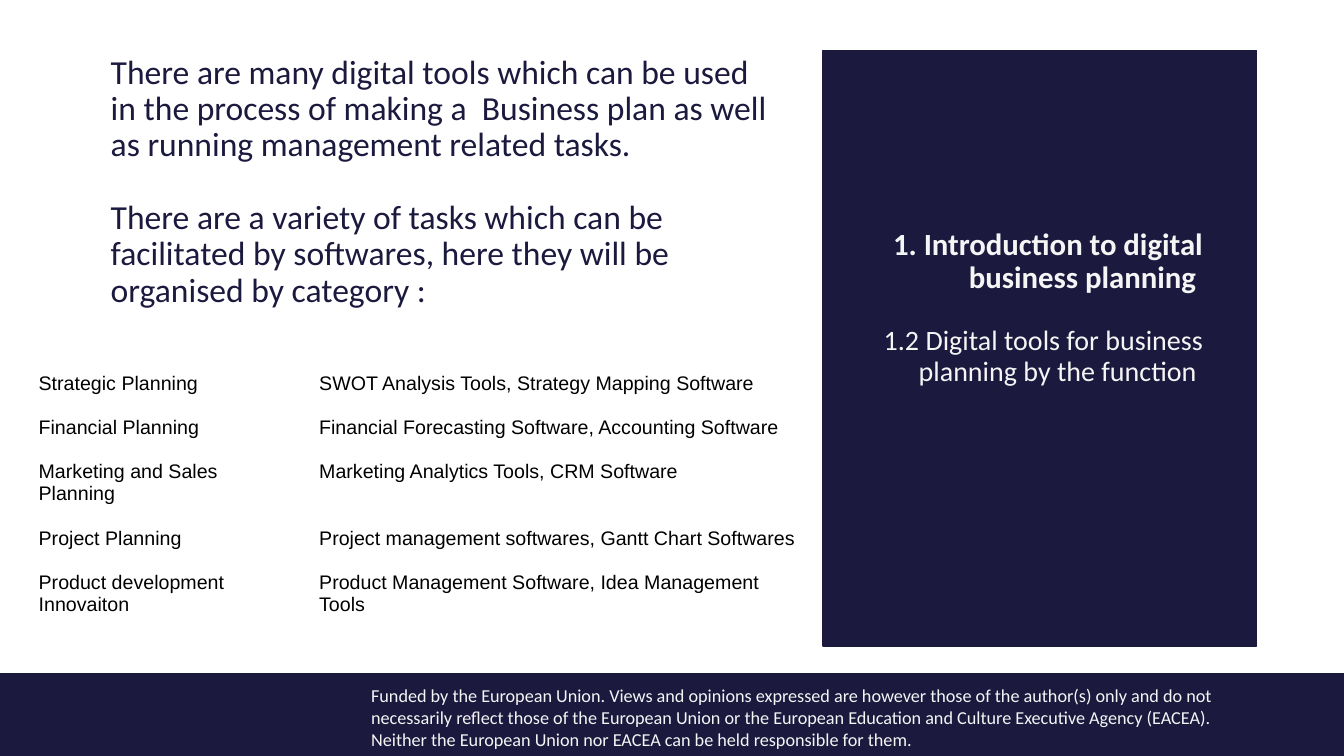
from dataclasses import dataclass

from pptx import Presentation
from pptx import util as u
from pptx.dml.color import RGBColor
from pptx.enum import shapes, text

CELL = u.Inches(1 / 12)  # the slide is a grid of 160 columns by 90 rows
COLORS = {"navy": "1B193E", "pale": "F5F5F5", "black": "000000"}


@dataclass(frozen=True)
class Area:
    column: float
    row: float
    columns: float
    rows: float

    def lengths(self) -> tuple:
        """Left, top, width and height in slide units."""
        return tuple(cells(n) for n in (self.column, self.row, self.columns, self.rows))


@dataclass(frozen=True)
class Style:
    size: float
    color: str
    font: str = "Calibri"
    bold: bool = False
    right: bool = False
    line_spacing: float = 1.0
    gap: float = 0


@dataclass(frozen=True)
class TextBlock:
    area: Area
    style: Style
    paragraphs: tuple


PANELS = (Area(0, 80.2, 160, 9.8), Area(98, 6, 51.6, 70.9))

TITLE = TextBlock(
    Area(103.2, 23.4, 41.2, 12.4),
    Style(22, "pale", bold=True, right=True, line_spacing=0.9),
    ("1. Introduction to digital business planning ",),
)
BLOCKS = (
    TextBlock(
        Area(43, 80.9, 106, 9.1),
        Style(13, "pale"),
        ("Funded by the European Union. Views and opinions expressed are however those "
         "of the author(s) only and do not necessarily reflect those of the European "
         "Union or the European Education and Culture Executive Agency (EACEA). Neither "
         "the European Union nor EACEA can be held responsible for them.",),
    ),
    TextBlock(
        Area(103.2, 38.3, 41.2, 33.7),
        Style(20, "pale", right=True, line_spacing=0.9),
        ("1.2 Digital tools for business planning by the function ",),
    ),
    TextBlock(
        Area(12, 6, 81, 70.9),
        Style(24, "navy", line_spacing=0.9, gap=26),
        ("There are many digital tools which can be used in the process of making a  "
         "Business plan as well as running management related tasks.",
         "There are a variety of tasks which can be facilitated by softwares, here they "
         "will be organised by category :"),
    ),
)

TOOLS = (
    ("Strategic Planning", "SWOT Analysis Tools, Strategy Mapping Software"),
    ("Financial Planning", "Financial Forecasting Software, Accounting Software"),
    ("Marketing and Sales Planning", "Marketing Analytics Tools, CRM Software"),
    ("Project Planning", "Project management softwares, Gantt Chart Softwares"),
    ("Product development Innovaiton", "Product Management Software, Idea Management Tools"),
)
TOOL_COLUMNS = (33.4, 59.3)
TOOL_ROW = 5.05
TOOL_AREA = Area(3.4, 43.2, sum(TOOL_COLUMNS), TOOL_ROW * len(TOOLS))
TOOL_STYLE = Style(14, "black", font="Arial")


def cells(count: float) -> int:
    return round(count * CELL)


def color(name: str) -> RGBColor:
    return RGBColor.from_string(COLORS[name])


def write(frame, paragraphs: tuple, style: Style) -> None:
    frame.word_wrap = True
    frame.text = "\n".join(paragraphs)
    for index, para in enumerate(frame.paragraphs):
        para.alignment = text.PP_ALIGN.RIGHT if style.right else text.PP_ALIGN.LEFT
        para.line_spacing = style.line_spacing
        para.space_before = u.Pt(style.gap if index else 0)
        for span in para.runs:
            span.font.name = style.font
            span.font.size = u.Pt(style.size)
            span.font.bold = style.bold
            span.font.color.rgb = color(style.color)


def add_panel(page, area: Area) -> None:
    panel = page.shapes.add_shape(shapes.MSO_SHAPE.RECTANGLE, *area.lengths())
    panel.shadow.inherit = False
    panel.fill.solid()
    panel.fill.fore_color.rgb = color("navy")
    panel.line.color.rgb = color("navy")
    panel.line.width = u.Pt(1)


def place_title(page, block: TextBlock) -> None:
    """Format the title placeholder and bring it in front of the panels."""
    title = page.shapes.title
    title.left, title.top, title.width, title.height = block.area.lengths()
    title.fill.solid()
    title.fill.fore_color.rgb = color("navy")
    frame = title.text_frame
    frame.auto_size = text.MSO_AUTO_SIZE.NONE
    frame.vertical_anchor = text.MSO_ANCHOR.BOTTOM
    write(frame, block.paragraphs, block.style)
    page.shapes._spTree.append(title._element)


def add_text(page, block: TextBlock) -> None:
    box = page.shapes.add_textbox(*block.area.lengths())
    write(box.text_frame, block.paragraphs, block.style)


def add_tool_table(page) -> None:
    table = page.shapes.add_table(len(TOOLS), len(TOOL_COLUMNS), *TOOL_AREA.lengths()).table
    table.first_row = table.horz_banding = False
    for column, width in zip(table.columns, TOOL_COLUMNS):
        column.width = cells(width)
    for row, entries in zip(table.rows, TOOLS):
        row.height = cells(TOOL_ROW)
        for cell, entry in zip(row.cells, entries):
            cell.fill.background()
            cell.margin_left = cell.margin_right = u.Inches(0.1)
            cell.margin_top = cell.margin_bottom = u.Inches(0.1)
            write(cell.text_frame, (entry,), TOOL_STYLE)


def main() -> None:
    deck = Presentation()
    deck.slide_width, deck.slide_height = cells(160), cells(90)
    page = deck.slides.add_slide(deck.slide_layouts.get_by_name("Title Only"))
    for area in PANELS:
        add_panel(page, area)
    place_title(page, TITLE)
    for block in BLOCKS:
        add_text(page, block)
    add_tool_table(page)
    deck.save("out.pptx")


if __name__ == "__main__":
    main()
